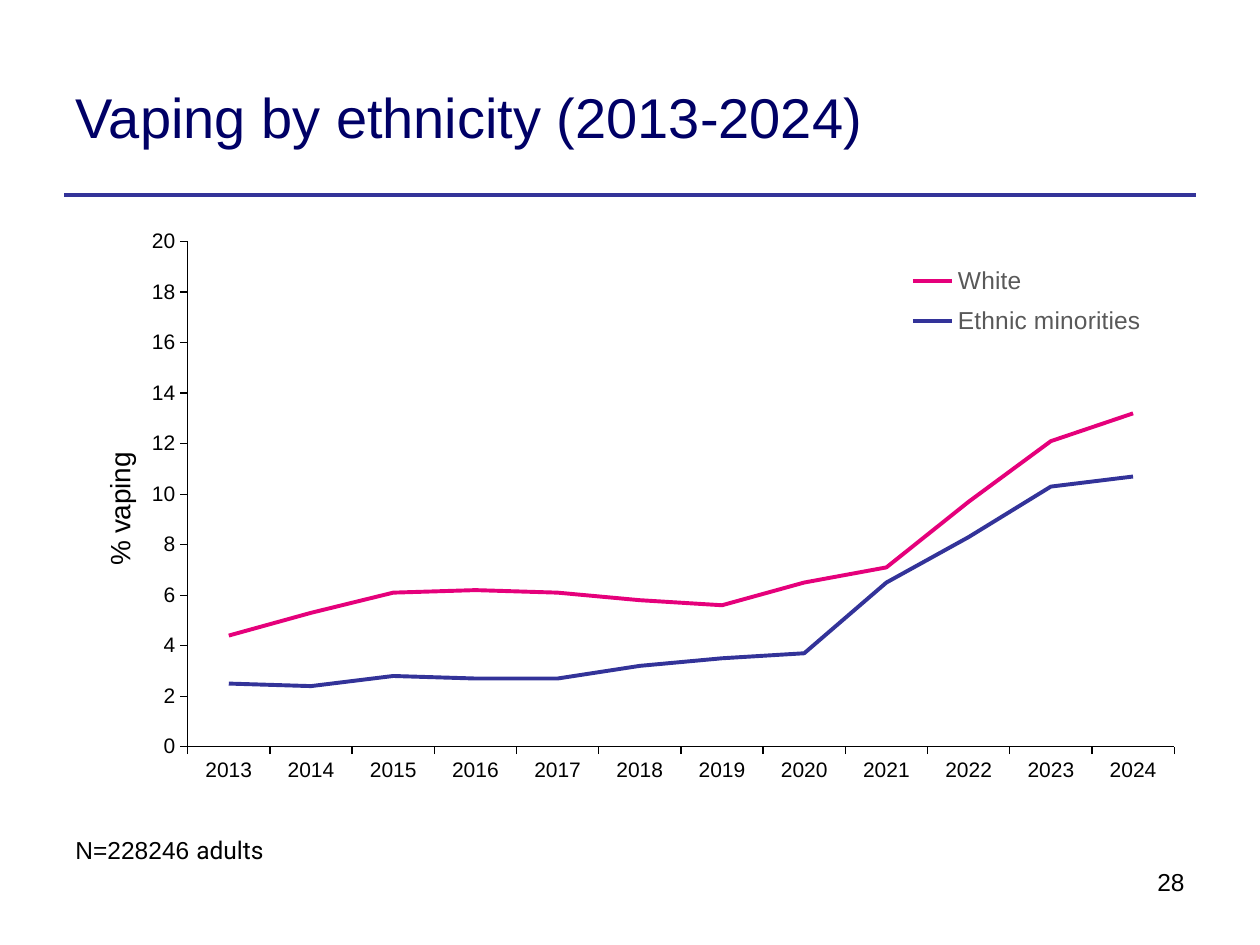
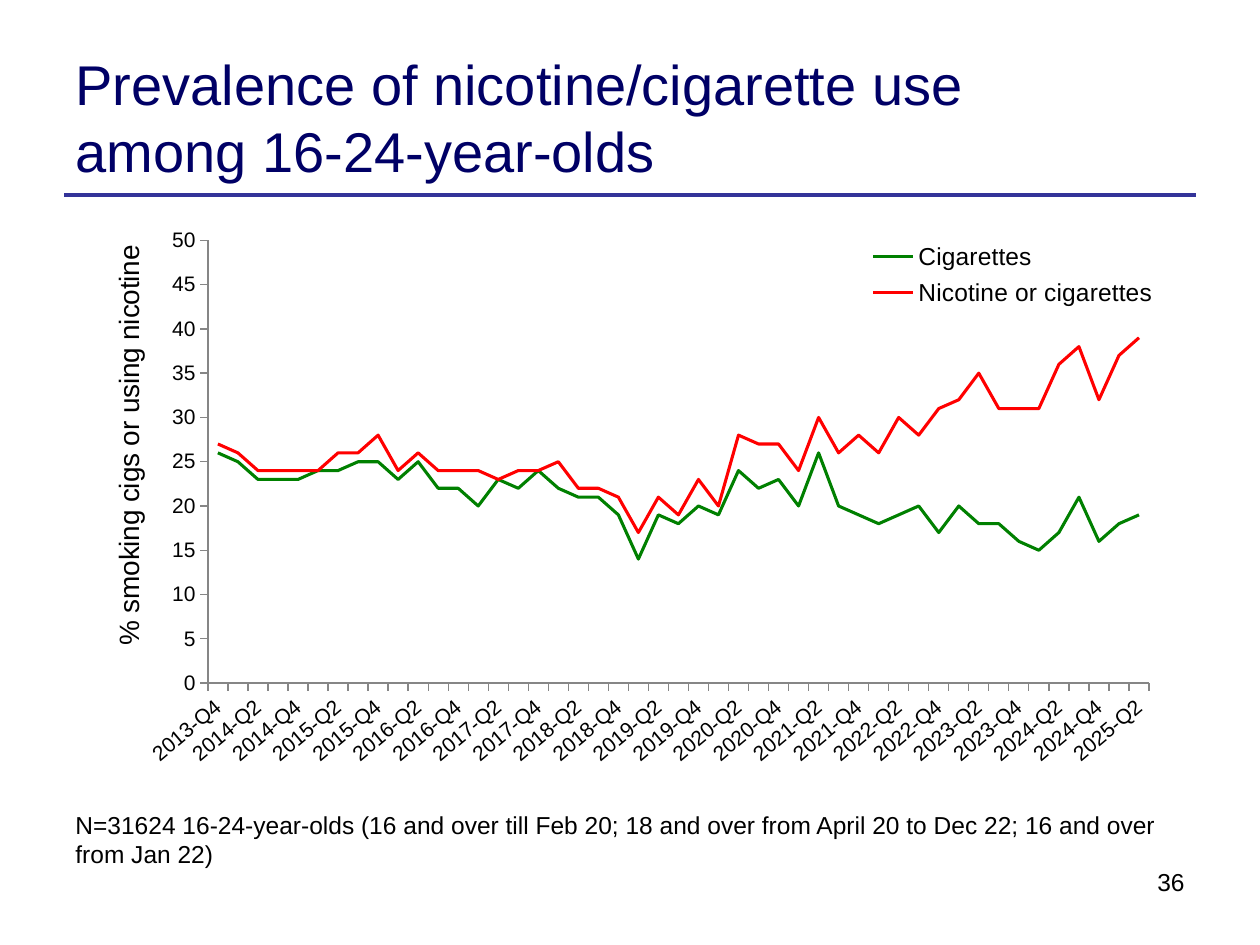
from lxml import etree
from pptx import Presentation
from pptx.chart.data import CategoryChartData
from pptx.dml.color import RGBColor
from pptx.enum.chart import XL_CHART_TYPE, XL_LEGEND_POSITION, XL_TICK_MARK
from pptx.enum.shapes import MSO_CONNECTOR
from pptx.enum.text import MSO_ANCHOR, MSO_AUTO_SIZE, PP_ALIGN
from pptx.oxml.ns import qn
from pptx.util import Inches, Pt

LINE_CHART = XL_CHART_TYPE.LINE
STRAIGHT = MSO_CONNECTOR.STRAIGHT
LEGEND_BOTTOM, LEGEND_RIGHT = XL_LEGEND_POSITION.BOTTOM, XL_LEGEND_POSITION.RIGHT
TICK_OUTSIDE, TICK_NONE = XL_TICK_MARK.OUTSIDE, XL_TICK_MARK.NONE
LEFT, RIGHT = PP_ALIGN.LEFT, PP_ALIGN.RIGHT
MIDDLE, TOP = MSO_ANCHOR.MIDDLE, MSO_ANCHOR.TOP
NO_AUTOFIT = MSO_AUTO_SIZE.NONE
TITLE_ONLY_LAYOUT = 5

FONT = "Arial"
NAVY, INDIGO, BLACK = "000066", "333399", "000000"
PINK, GREEN, RED = "E5007B", "008000", "FF0000"
DARK_GREY, AXIS_GREY = "595959", "868686"


def color(hex_value):
    return RGBColor.from_string(hex_value)


def set_font(font, size, hex_value=BLACK, name=FONT):
    for attribute, value in {"name": name, "size": Pt(size), "bold": False}.items():
        setattr(font, attribute, value)
    font.color.rgb = color(hex_value)


def set_line(line, hex_value, width):
    line.color.rgb = color(hex_value)
    line.width = Pt(width)


def set_layout(element, position, values, inner=False):
    """Place a chart part by fractions of the chart: x, y and, if given, w, h."""
    for previous in element.findall(qn("c:layout")):
        element.remove(previous)
    layout = etree.Element(qn("c:layout"))
    manual = etree.SubElement(layout, qn("c:manualLayout"))
    settings = [("layoutTarget", "inner")] if inner else []
    settings += [("xMode", "edge"), ("yMode", "edge")]
    settings += zip("xywh", values)
    for tag, value in settings:
        etree.SubElement(manual, qn(f"c:{tag}")).set("val", str(value))
    element.insert(position, layout)


class Deck:
    def __init__(self):
        self.presentation = Presentation()
        self.presentation.slide_width = Inches(10)
        self.presentation.slide_height = Inches(7.5)
        self.slide = None

    def add_slide(self, title, number):
        layout = self.presentation.slide_layouts[TITLE_ONLY_LAYOUT]
        self.slide = self.presentation.slides.add_slide(layout)
        self.rule()
        self.title(title)
        self.text([(str(number), FONT)], (6.73, 6.83, 2.77, 0.52), RIGHT)

    def rule(self):
        connector = self.slide.shapes.add_connector(
            STRAIGHT, Inches(0.51), Inches(1.55), Inches(9.49), Inches(1.55))
        set_line(connector.line, INDIGO, 2.25)
        etree.SubElement(connector._element.spPr, qn("a:effectLst"))

    def title(self, text):
        shape = self.slide.shapes.title
        box = {"left": 0.5, "top": 0.3, "width": 7.89, "height": 1.25}
        for attribute, value in box.items():
            setattr(shape, attribute, Inches(value))
        frame = shape.text_frame
        frame.text = text
        frame.auto_size = NO_AUTOFIT
        frame.vertical_anchor = MIDDLE
        frame.paragraphs[0].alignment = LEFT
        set_font(frame.paragraphs[0].runs[0].font, 32, NAVY)

    def text(self, runs, box, alignment=LEFT):
        frame = self.slide.shapes.add_textbox(*map(Inches, box)).text_frame
        frame.word_wrap = True
        frame.vertical_anchor = TOP
        paragraph = frame.paragraphs[0]
        paragraph.alignment = alignment
        for words, font_name in runs:
            run = paragraph.add_run()
            run.text = words
            set_font(run.font, 14, name=font_name)

    def line_chart(self, box, categories, series, style):
        """Draw series given as (name, colour, values)."""
        data = CategoryChartData()
        data.categories = categories
        for name, _, values in series:
            data.add_series(name, values)
        chart = self.slide.shapes.add_chart(
            LINE_CHART, *map(Inches, box), data).chart
        chart.has_title = False
        set_font(chart.font, 12)
        plot = chart.plots[0]
        plot.vary_by_categories = False
        for line, (_, hex_value, _) in zip(plot.series, series):
            line.smooth = False
            set_line(line.format.line, hex_value, style["line_width"])
        set_layout(chart._chartSpace.chart.plotArea, 0, style["plot"], inner=True)
        self.axes(chart, style)
        self.legend(chart, style)

    def axes(self, chart, style):
        for axis in (chart.category_axis, chart.value_axis):
            axis.major_tick_mark = TICK_OUTSIDE
            axis.minor_tick_mark = TICK_NONE
            axis.has_major_gridlines = False
            set_line(axis.format.line, style["axis_color"], 0.75)
            set_font(axis.tick_labels.font, 12)
        if "label_rotation" in style:
            label_body = chart.category_axis._element.txPr.bodyPr
            label_body.set("rot", str(style["label_rotation"] * 60000))
            label_body.set("vert", "horz")
        value_axis = chart.value_axis
        scale = {"minimum_scale": 0, "maximum_scale": style["maximum"],
                 "major_unit": style["step"]}
        for attribute, value in scale.items():
            setattr(value_axis, attribute, value)
        value_axis.tick_labels.number_format = "General"
        value_axis.tick_labels.number_format_is_linked = False
        frame = value_axis.axis_title.text_frame
        frame.text = style["axis_title"]
        frame._txBody.bodyPr.set("rot", "-5400000")
        frame._txBody.bodyPr.set("vert", "horz")
        set_font(frame.paragraphs[0].runs[0].font, 16)
        set_layout(value_axis.axis_title._element, 1, style["axis_title_at"])

    def legend(self, chart, style):
        chart.has_legend = True
        legend = chart.legend
        legend.position = style["legend_position"]
        legend.include_in_layout = False
        set_font(legend.font, 14, style["legend_color"])
        set_layout(legend._element, 1, style["legend_at"])


def add_ethnicity_slide(deck):
    deck.add_slide("Vaping by ethnicity (2013-2024)", 28)
    series = [
        ("White", PINK,
         [4.4, 5.3, 6.1, 6.2, 6.1, 5.8, 5.6, 6.5, 7.1, 9.7, 12.1, 13.2]),
        ("Ethnic minorities", INDIGO,
         [2.5, 2.4, 2.8, 2.7, 2.7, 3.2, 3.5, 3.7, 6.5, 8.3, 10.3, 10.7]),
    ]
    years = [str(year) for year in range(2013, 2025)]
    deck.line_chart((0.5, 1.72, 9, 4.95), years, series, {
        "line_width": 2.25, "axis_color": BLACK, "maximum": 20, "step": 2,
        "axis_title": "% vaping", "axis_title_at": (0.03, 0.37),
        "plot": (0.11, 0.04, 0.87, 0.81),
        "legend_position": LEGEND_BOTTOM, "legend_color": DARK_GREY,
        "legend_at": (0.74, 0.06, 0.22, 0.15),
    })
    deck.text([("N=228246 ", FONT), ("adults", "Roboto")], (0.5, 6.58, 8.51, 0.34))


def add_nicotine_slide(deck):
    deck.add_slide("Prevalence of nicotine/cigarette use among 16-24-year-olds", 36)
    series = [
        ("Cigarettes", GREEN,
         [26, 25, 23, 23, 23, 24, 24, 25, 25, 23, 25, 22, 22, 20, 23, 22,
          24, 22, 21, 21, 19, 14, 19, 18, 20, 19, 24, 22, 23, 20, 26, 20,
          19, 18, 19, 20, 17, 20, 18, 18, 16, 15, 17, 21, 16, 18, 19]),
        ("Nicotine or cigarettes", RED,
         [27, 26, 24, 24, 24, 24, 26, 26, 28, 24, 26, 24, 24, 24, 23, 24,
          24, 25, 22, 22, 21, 17, 21, 19, 23, 20, 28, 27, 27, 24, 30, 26,
          28, 26, 30, 28, 31, 32, 35, 31, 31, 31, 36, 38, 32, 37, 39]),
    ]
    all_quarters = [f"{year}-Q{quarter}"
                    for year in range(2013, 2026) for quarter in range(1, 5)]
    quarters = all_quarters[3:-2]
    deck.line_chart((0.48, 1.71, 9, 4.95), quarters, series, {
        "line_width": 1.75, "axis_color": AXIS_GREY, "maximum": 50, "step": 5,
        "axis_title": "% smoking cigs or using nicotine",
        "axis_title_at": (0.04, 0.04), "label_rotation": -40,
        "plot": (0.13, 0.04, 0.83, 0.71),
        "legend_position": LEGEND_RIGHT, "legend_color": BLACK,
        "legend_at": (0.71, 0.03, 0.26, 0.13),
    })
    note = ("N=31624 16-24-year-olds (16 and over till Feb 20; 18 and over "
            "from April 20 to Dec 22; 16 and over from Jan 22)")
    deck.text([(note, FONT)], (0.5, 6.38, 8.89, 0.57))


def main():
    deck = Deck()
    add_ethnicity_slide(deck)
    add_nicotine_slide(deck)
    deck.presentation.save("out.pptx")


if __name__ == "__main__":
    main()
